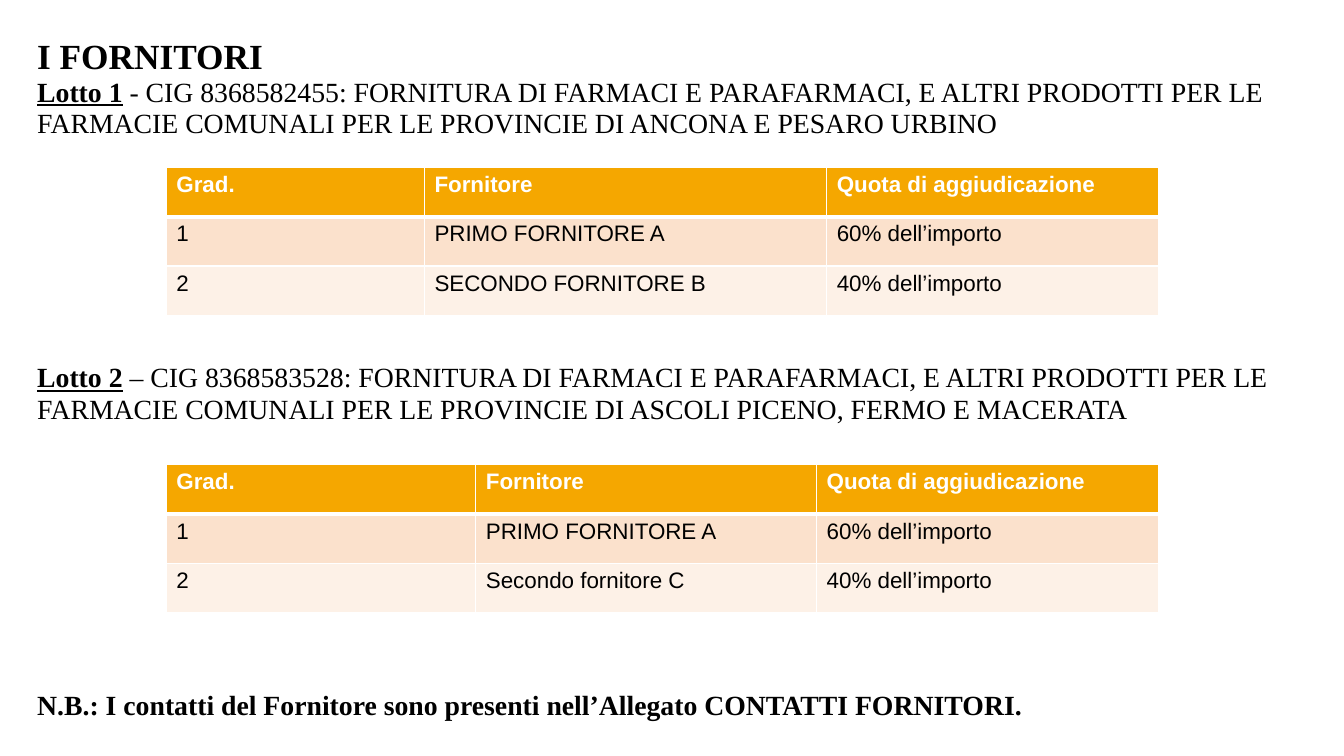
from dataclasses import dataclass

from pptx import Presentation, util as u
from pptx.dml.color import RGBColor
from pptx.enum import text
from pptx.oxml import parse_xml
from pptx.oxml.ns import nsdecls

PX = 9144  # 100 px to the inch
BLACK = RGBColor(0x00, 0x00, 0x00)
WHITE = RGBColor(0xFF, 0xFF, 0xFF)
ORANGE = RGBColor(0xF5, 0xA7, 0x00)
PEACH = RGBColor(0xFB, 0xE1, 0xCC)
CREAM = RGBColor(0xFD, 0xF1, 0xE7)
SERIF, SANS = "Times New Roman", "Arial"
ROW_FILLS = (ORANGE, PEACH, CREAM)
HEADER = ("Grad.", "Fornitore", "Quota di aggiudicazione")
TABLE_LEFT, ROW_HEIGHT = 165, 49
TEXT_LEFT, TEXT_WIDTH = 27, 1265


@dataclass
class Span:
    words: str
    size: float = 19.8
    bold: bool = False
    underline: bool = False


@dataclass
class Block:
    top: int
    height: int
    paras: list[list[Span]]


@dataclass
class Ranking:
    top: int
    widths: tuple[int, ...]
    suppliers: tuple[str, str]


def lot(name: str, subject: str) -> list[Span]:
    return [Span(name, bold=True, underline=True), Span(subject)]


BLOCKS = [
    Block(37, 100, [
        [Span("I FORNITORI", size=25.2, bold=True)],
        lot("Lotto 1", " - CIG 8368582455: FORNITURA DI FARMACI E PARAFARMACI, E ALTRI PRODOTTI "
            "PER LE FARMACIE COMUNALI PER LE PROVINCIE DI ANCONA E PESARO URBINO"),
    ]),
    Block(360, 62, [
        lot("Lotto 2", " – CIG 8368583528: FORNITURA DI FARMACI E PARAFARMACI, E ALTRI PRODOTTI "
            "PER LE FARMACIE COMUNALI PER LE PROVINCIE DI ASCOLI PICENO, FERMO E MACERATA"),
    ]),
    Block(685, 35, [
        [Span("N.B.: I contatti del Fornitore sono presenti nell’Allegato CONTATTI FORNITORI.",
              bold=True)],
    ]),
]
RANKINGS = [
    Ranking(166, (256, 399, 329), ("PRIMO FORNITORE A", "SECONDO FORNITORE B")),
    Ranking(461, (307, 338, 339), ("PRIMO FORNITORE A", "Secondo fornitore C")),
]


def apply(target, values: dict) -> None:
    for name, value in values.items():
        setattr(target, name, value)


def draw_block(page, block: Block) -> None:
    box = page.shapes.add_textbox(TEXT_LEFT * PX, block.top * PX,
                                  TEXT_WIDTH * PX, block.height * PX)
    frame = box.text_frame
    apply(frame, {"word_wrap": True, "margin_top": 0, "margin_bottom": 0,
                  "vertical_anchor": text.MSO_ANCHOR.TOP})
    for index, spans in enumerate(block.paras):
        para = frame.add_paragraph() if index else frame.paragraphs[0]
        para.line_spacing = 0.94
        for span in spans:
            run = para.add_run()
            run.text = span.words
            apply(run.font, {"name": SERIF, "size": u.Pt(span.size), "bold": span.bold,
                             "underline": span.underline})
            run.font.color.rgb = BLACK


def add_borders(cell, row: int) -> None:
    """White cell borders, thicker between the header and the body."""
    points = {"L": 1, "R": 1, "T": 3 if row == 1 else 1, "B": 3 if row == 0 else 1}
    for side, width in points.items():
        cell._tc.get_or_add_tcPr().append(parse_xml(
            f'<a:ln{side} {nsdecls("a")} w="{u.Pt(width)}"><a:solidFill>'
            f'<a:srgbClr val="{WHITE}"/></a:solidFill></a:ln{side}>'))


def draw_ranking(page, ranking: Ranking) -> None:
    first, second = ranking.suppliers
    rows = (HEADER, ("1", first, "60% dell’importo"), ("2", second, "40% dell’importo"))
    table = page.shapes.add_table(len(rows), len(HEADER), TABLE_LEFT * PX, ranking.top * PX,
                                  sum(ranking.widths) * PX, len(rows) * ROW_HEIGHT * PX).table
    for column, width in zip(table.columns, ranking.widths):
        column.width = width * PX
    for r, words in enumerate(rows):
        for c, word in enumerate(words):
            cell = table.cell(r, c)
            add_borders(cell, r)
            cell.fill.solid()
            cell.fill.fore_color.rgb = ROW_FILLS[r]
            cell.text = word
            font = cell.text_frame.paragraphs[0].runs[0].font
            apply(font, {"name": SANS, "size": u.Pt(16), "bold": r == 0})
            font.color.rgb = BLACK if r else WHITE


def main() -> None:
    deck = Presentation()
    apply(deck, {"slide_width": 1333 * PX, "slide_height": 750 * PX})
    page = deck.slides.add_slide(deck.slide_layouts[6])
    # Heading, lots and closing note
    for block in BLOCKS:
        draw_block(page, block)
    # Supplier tables
    for ranking in RANKINGS:
        draw_ranking(page, ranking)
    deck.save("out.pptx")


if __name__ == "__main__":
    main()
